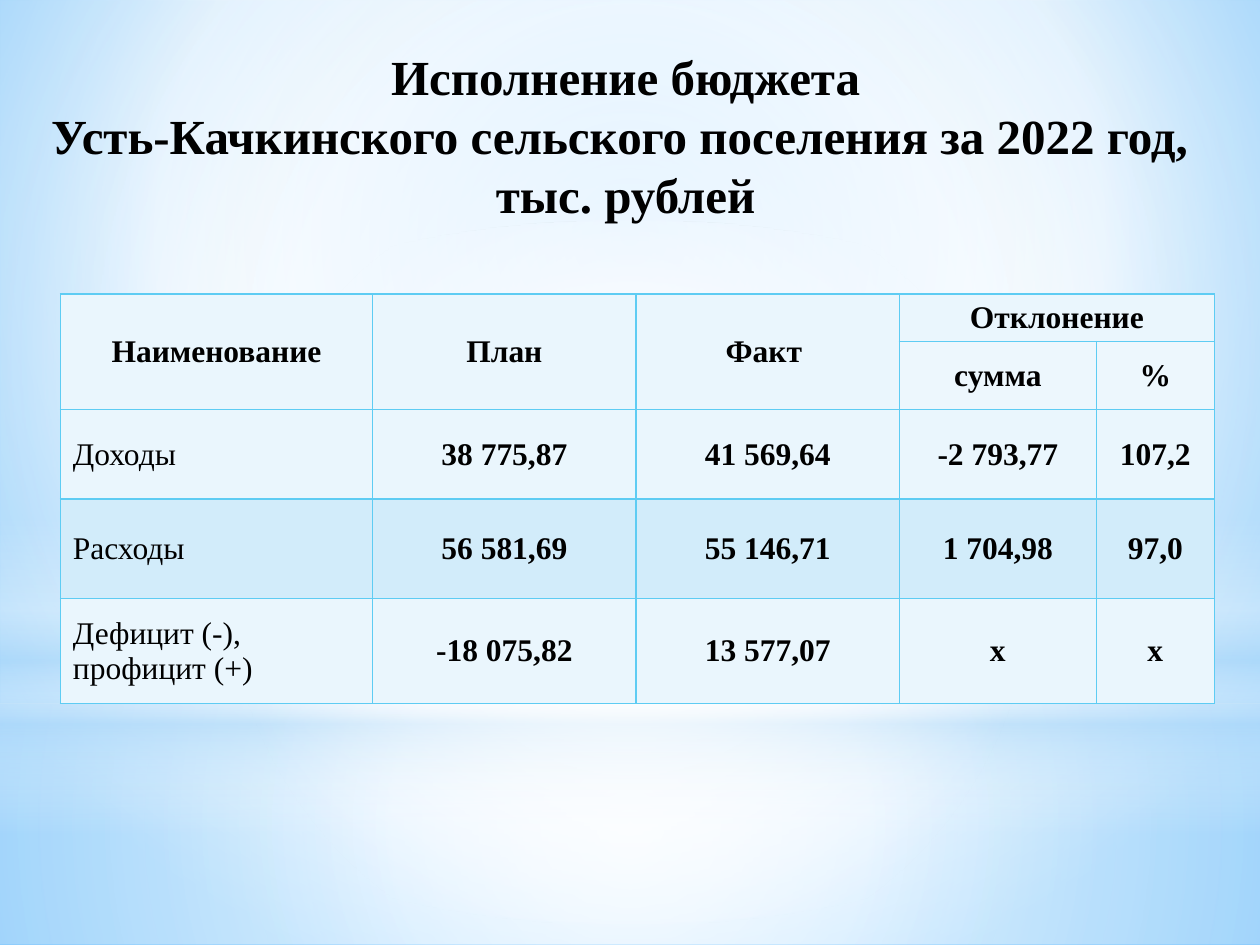
from dataclasses import dataclass

from lxml import etree
from pptx import Presentation
from pptx.dml.color import RGBColor
from pptx.enum.shapes import MSO_SHAPE
from pptx.enum.text import MSO_ANCHOR, MSO_AUTO_SIZE, PP_ALIGN
from pptx.oxml import parse_xml
from pptx.oxml.ns import qn
from pptx.util import Pt

RECT, OVAL = MSO_SHAPE.RECTANGLE, MSO_SHAPE.OVAL
MIDDLE, CENTER, LEFT = MSO_ANCHOR.MIDDLE, PP_ALIGN.CENTER, PP_ALIGN.LEFT
NS = ('xmlns:a="http://schemas.openxmlformats.org/drawingml/2006/main" '
      'xmlns:p="http://schemas.openxmlformats.org/presentationml/2006/main"')
FONT, BLACK, BORDER = "Times New Roman", "000000", "5ECCF3"
PALE, PALER, BAND = "EAF6FD", "EDF7FD", "D2ECFA"
WHITE, SKY = "FFFFFF", "B4DCFA"
MIDPOINT = (50, 50, 50, 50)


@dataclass
class Glow:
    """A soft gradient shape: stops are (position %, colour, opacity %)."""
    kind: int
    top: float
    height: float
    stops: list
    focus: tuple | None = MIDPOINT  # None gives a vertical linear gradient


GLOWS = [
    Glow(RECT, 402, 138, [(0, WHITE, 91), (37, WHITE, 76), (100, SKY, 79)]),
    Glow(RECT, 0, 402, [(0, WHITE, 89), (48, WHITE, 62), (100, SKY, 79)]),
    Glow(RECT, 296.5, 180, [(0, WHITE, 0), (29, WHITE, 30), (45, SKY, 40),
                            (55, WHITE, 26), (65, SKY, 60), (100, WHITE, 0)], None),
    Glow(OVAL, 126, 402, [(0, WHITE, 100), (56, WHITE, 0)]),
]
BACKDROP = [(0, "9ED5FF", 100), (60, WHITE, 100), (100, "5BB9FF", 100)]

COLS = [178.5, 150.5, 150.5, 112.5, 67.5]
ROWS = [27, 39, 51, 57, 60]
HEADER = [["Наименование", "План", "Факт ", "Отклонение", ""],
          ["", "", "", "сумма", "%"]]
BODY = [["Доходы", "38 775,87", "41 569,64", "-2 793,77", "107,2"],
        ["Расходы", "56 581,69", "55 146,71", "1 704,98", "97,0"],
        ["Дефицит (-), профицит (+)", "-18 075,82", "13 577,07", "х", "х"]]
FILLS = [PALE, PALER, PALE, BAND, PALE]


def rgb(color: str) -> RGBColor:
    return RGBColor.from_string(color)


def gradient_xml(stops: list, focus: tuple | None) -> str:
    gs = "".join(f'<a:gs pos="{pos * 1000}"><a:srgbClr val="{color}">'
                 f'<a:alpha val="{alpha * 1000}"/></a:srgbClr></a:gs>'
                 for pos, color, alpha in stops)
    if focus is None:
        shade = '<a:lin ang="5400000" scaled="0"/>'
    else:
        rect = " ".join(f'{side}="{v * 1000}"' for side, v in zip("ltrb", focus))
        shade = f'<a:path path="circle"><a:fillToRect {rect}/></a:path>'
    return f'<a:gradFill {NS} rotWithShape="1"><a:gsLst>{gs}</a:gsLst>{shade}</a:gradFill>'


def set_background(s, stops: list, focus: tuple) -> None:
    bg = parse_xml(f"<p:bg {NS}><p:bgPr>{gradient_xml(stops, focus)}"
                   "<a:effectLst/></p:bgPr></p:bg>")
    s.element.cSld.insert(0, bg)


def add_glow(s, glow: Glow) -> None:
    sp = s.shapes.add_shape(glow.kind, 0, Pt(glow.top), Pt(720), Pt(glow.height))
    sp.shadow.inherit = False
    sp.line.fill.background()
    geometry = sp.element.spPr.find(qn("a:prstGeom"))
    geometry.addnext(parse_xml(gradient_xml(glow.stops, glow.focus)))


def write(tf, text: str, size: float = 18, bold: bool = True, align=CENTER) -> None:
    """Each line of text is a paragraph; a vertical tab breaks a line inside one."""
    tf.word_wrap = True
    tf.text = text
    for p in tf.paragraphs:
        p.alignment = align
        for r in p.runs:
            r.font.name, r.font.size, r.font.bold = FONT, Pt(size), bold
            r.font.color.rgb = rgb(BLACK)


def style_cell(cell, fill: str) -> None:
    tcPr = cell._tc.get_or_add_tcPr()
    for side in ("lnL", "lnR", "lnT", "lnB"):
        ln = etree.SubElement(tcPr, qn(f"a:{side}"), w=str(Pt(1)))
        solid = etree.SubElement(ln, qn("a:solidFill"))
        etree.SubElement(solid, qn("a:srgbClr"), val=BORDER)
    cell.fill.solid()
    cell.fill.fore_color.rgb = rgb(fill)
    cell.vertical_anchor = MIDDLE


def add_budget_table(s) -> None:
    table = s.shapes.add_table(len(ROWS), len(COLS), Pt(34.5), Pt(168),
                               Pt(sum(COLS)), Pt(sum(ROWS))).table
    table.first_row = table.horz_banding = False
    for column, width in zip(table.columns, COLS):
        column.width = Pt(width)
    for row, height in zip(table.rows, ROWS):
        row.height = Pt(height)
    for i, values in enumerate(HEADER + BODY):
        for j, value in enumerate(values):
            cell = table.cell(i, j)
            style_cell(cell, FILLS[i])
            label = j == 0 and i >= len(HEADER)
            if value:
                write(cell.text_frame, value, bold=not label,
                      align=LEFT if label else CENTER)
    # Header spans
    for j in range(3):
        table.cell(0, j).merge(table.cell(1, j))
    table.cell(0, 3).merge(table.cell(0, 4))


def add_title(s) -> None:
    title = s.shapes.title
    title.left, title.top, title.width, title.height = Pt(8.5), Pt(24), Pt(698), Pt(106.5)
    tf = title.text_frame
    tf.auto_size, tf.vertical_anchor = MSO_AUTO_SIZE.NONE, MIDDLE
    write(tf, " Исполнение бюджета \vУсть-Качкинского сельского поселения за 2022 год, \n"
              "тыс. рублей", size=28)
    s.shapes._spTree.append(title.element)  # bring to front


def main() -> None:
    prs = Presentation()
    prs.slide_width, prs.slide_height = Pt(720), Pt(540)
    s = prs.slides.add_slide(prs.slide_layouts[5])
    # Backdrop
    set_background(s, BACKDROP, (20, 10, 20, 60))
    for glow in GLOWS:
        add_glow(s, glow)
    # Content
    add_budget_table(s)
    add_title(s)
    prs.save("out.pptx")


if __name__ == "__main__":
    main()
